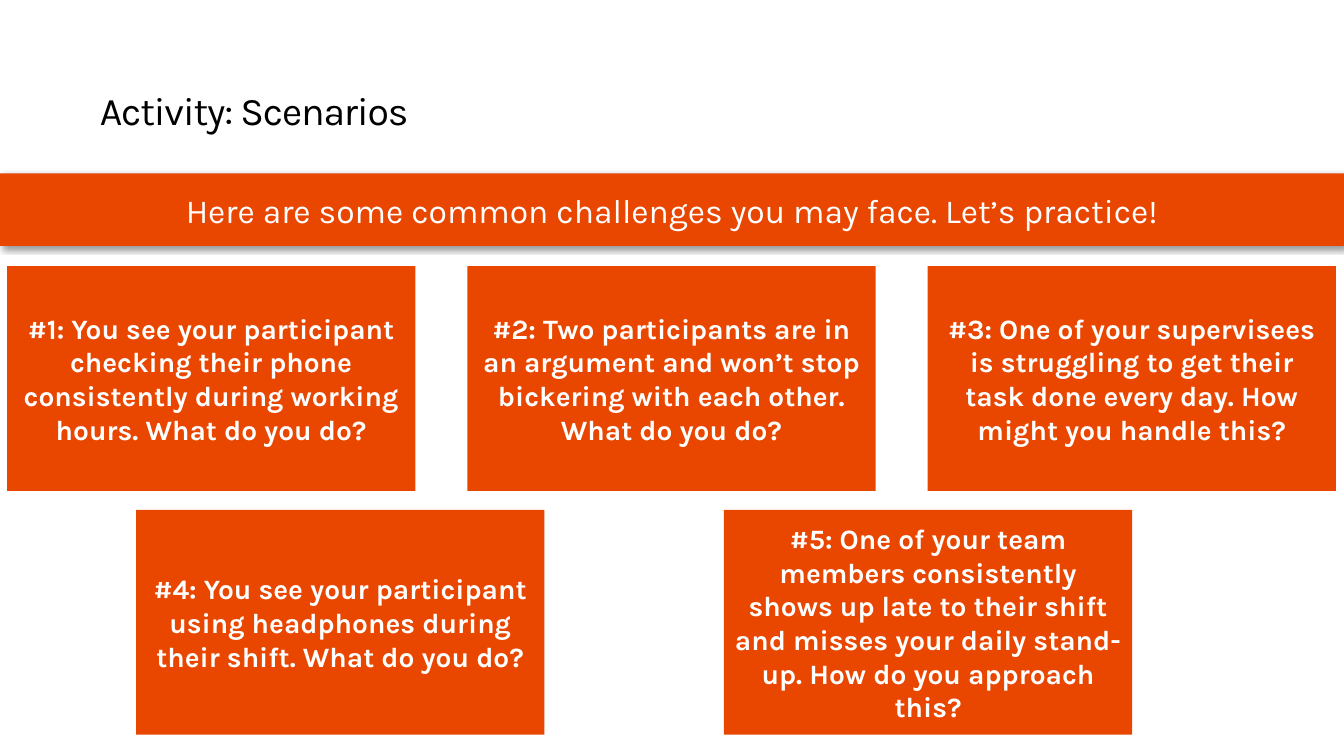
"""Build the activity slide with five practice scenarios."""
from lxml import etree
from pptx import Presentation
from pptx.dml.color import RGBColor
from pptx.enum.shapes import MSO_SHAPE
from pptx.enum.text import MSO_ANCHOR, PP_ALIGN
from pptx.oxml import parse_xml
from pptx.oxml.ns import nsdecls
from pptx.util import Inches, Pt

TITLE = "Activity: Scenarios"
BANNER = "Here are some common challenges you may face. Let’s practice!"
ROWS = [
    {"left": 0.07, "top": 2.64, "step": 4.565, "scenarios": [
        "You see your participant checking their phone consistently during "
        "working hours. What do you do?",
        "Two participants are in an argument and won’t stop bickering with "
        "each other. What do you do?",
        "One of your supervisees is struggling to get their task done every "
        "day. How might you handle this?",
    ]},
    {"left": 1.35, "top": 5.06, "step": 5.83, "scenarios": [
        "You see your participant using headphones during their shift. "
        "What do you do?",
        "One of your team members consistently shows up late to their shift "
        "and misses your daily stand-up. How do you approach this?",
    ]},
]
FONT = "Karla"
ORANGE, WHITE, BLACK = "E94600", "FFFFFF", "000000"
SLIDE_W, SLIDE_H = 13.33, 7.5
CARD_W, CARD_H = 4.05, 2.23


def color(target, value):
    target.rgb = RGBColor.from_string(value)


def write(sp, text, size, value, bold=False):
    tf = sp.text_frame
    tf.word_wrap = True
    p = tf.paragraphs[0]
    p.add_run().text = text
    p.font.name, p.font.size, p.font.bold = FONT, Pt(size), bold
    color(p.font.color, value)
    return p


def add_box(slide, left, top, width, height, text, size, bold=False):
    sp = slide.shapes.add_shape(MSO_SHAPE.RECTANGLE, *map(Inches, (left, top, width, height)))
    sp.shadow.inherit = False
    sp.fill.solid()
    color(sp.fill.fore_color, ORANGE)
    sp.line.fill.background()
    sp.text_frame.vertical_anchor = MSO_ANCHOR.MIDDLE
    write(sp, text, size, WHITE, bold).alignment = PP_ALIGN.CENTER
    return sp


def add_shadow(sp):
    effects = sp.element.spPr.find("{*}effectLst")
    effects.append(parse_xml(
        f'<a:outerShdw {nsdecls("a")} blurRad="{Pt(4)}" dist="{Pt(3)}" dir="{45 * 60000}" '
        f'algn="tl" rotWithShape="0"><a:srgbClr val="{BLACK}"><a:alpha val="40000"/>'
        '</a:srgbClr></a:outerShdw>'))


def add_title(slide):
    sp = slide.shapes.add_textbox(*map(Inches, (0.99, 0.68, 11.33, 0.65)))
    tf = sp.text_frame
    tf.margin_left = tf.margin_right = tf.margin_bottom = 0
    tf.vertical_anchor = MSO_ANCHOR.BOTTOM
    p = write(sp, TITLE, 28, BLACK)
    p.line_spacing = 0.9
    p.runs[0].font._element.set("spc", "-80")


def main():
    prs = Presentation()
    prs.slide_width, prs.slide_height = Inches(SLIDE_W), Inches(SLIDE_H)
    slide = prs.slides.add_slide(prs.slide_layouts[6])
    add_title(slide)
    add_shadow(add_box(slide, 0, 1.72, SLIDE_W, 0.72, BANNER, 24))
    number = 1
    for row in ROWS:
        for col, scenario in enumerate(row["scenarios"]):
            add_box(slide, row["left"] + col * row["step"], row["top"], CARD_W, CARD_H,
                    f"#{number}: {scenario}", 20, bold=True)
            number += 1
    prs.save("out.pptx")


if __name__ == "__main__":
    main()
